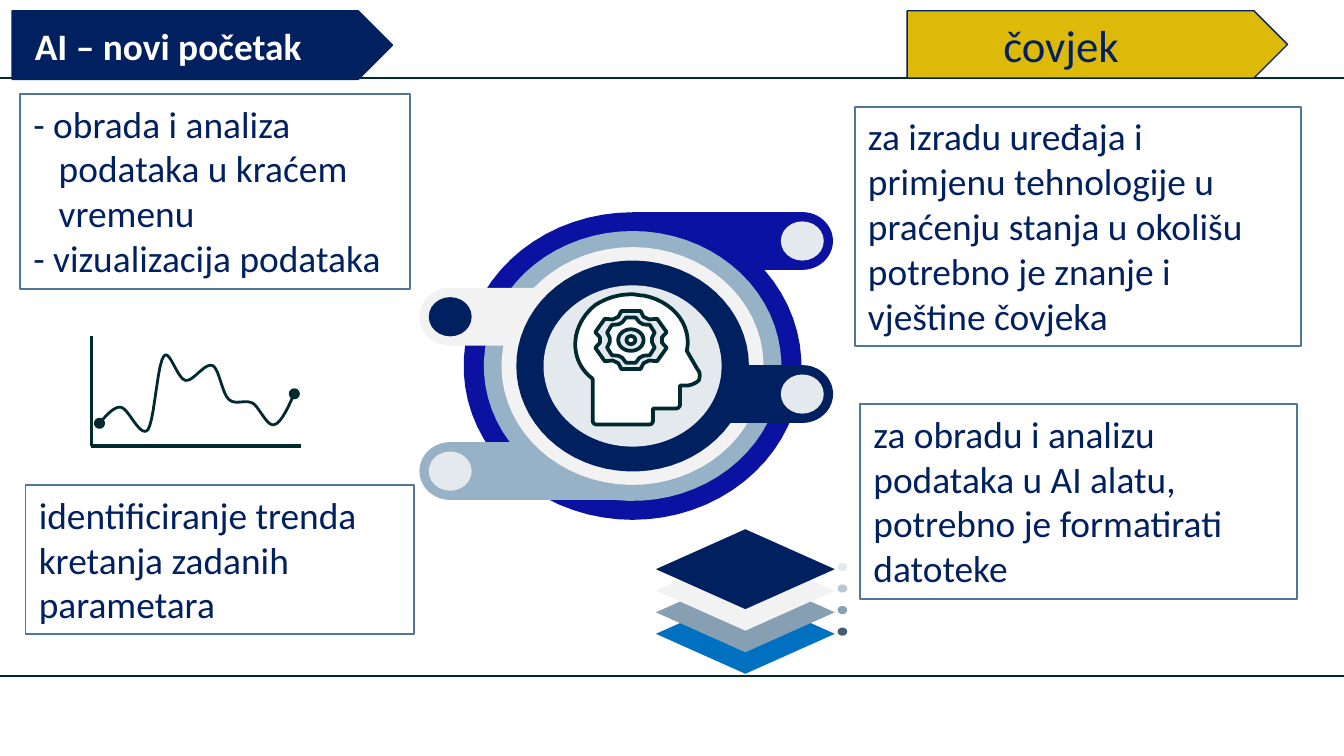
from dataclasses import dataclass
from math import asin, cos, pi, radians, sin

from lxml.etree import SubElement
from pptx import Presentation
from pptx.dml.color import RGBColor
from pptx.enum.shapes import MSO_CONNECTOR, MSO_SHAPE
from pptx.enum.text import MSO_ANCHOR, MSO_AUTO_SIZE, PP_ALIGN
from pptx.oxml.ns import qn
from pptx.util import Pt


@dataclass(frozen=True)
class Theme:
    font: str = "Calibri"
    body: int = 20
    heading: int = 24
    navy: str = "002060"
    white: str = "FFFFFF"
    gold: str = "DDBA09"
    indigo: str = "0B12A1"
    steel: str = "97B1C7"
    pale: str = "F2F2F2"
    mist: str = "E3E9ED"
    ink: str = "002930"
    frame: str = "517798"
    blue: str = "0070C0"
    slate: str = "869FB2"
    dark_slate: str = "435D74"
    silver: str = "BAC8D3"


THEME = Theme()

RULES = [(0, 41.8, 720, 41.8), (0, 362.2, 720, 362.2)]
BANNERS = [
    ("AI – novi početak", (6.5, 5.8, 203.8, 36.7), 12.2, THEME.body, True, THEME.white, THEME.navy),
    ("čovjek", (486, 5.8, 203.8, 36), 51.5, THEME.heading, False, THEME.navy, THEME.gold),
]
NOTES = [
    ((10.8, 50.4, 208.8, 104.4), 13.6,
     ["- obrada i analiza podataka u kraćem vremenu", "- vizualizacija podataka"]),
    ((13.7, 260, 208.1, 79.9), 0, ["identificiranje trenda kretanja zadanih parametara"]),
    ((457.9, 57.2, 239, 128.2), 0,
     ["za izradu uređaja i primjenu tehnologije u praćenju stanja u okolišu "
      "potrebno je znanje i vještine čovjeka"]),
    ((460.8, 216.6, 234, 104.4), 0,
     ["za obradu i analizu podataka u AI alatu, potrebno je formatirati datoteke"]),
]

RING_CENTER = (338.9, 196.1)
TAB_X = {1: 429.8, -1: 241.2}
TAB_RADII = (16.5, 15.5)
RINGS = [
    (90.5, 82.4, 1, 129.1, THEME.indigo, THEME.mist),
    (79.7, 72.3, -1, 252.4, THEME.steel, THEME.mist),
    (70.2, 63.7, -1, 169.7, THEME.pale, THEME.navy),
    (62.3, 56.5, 1, 211.1, THEME.navy, THEME.mist),
]
GEAR_CENTER = (338, 182.2)
GEARS = [(19.4, 15.8, 15, THEME.mist), (13.2, 12.1, 11, THEME.white)]
HUBS = [(6.8, 5.8, THEME.mist), (2.4, 2.2, THEME.white)]
HEAD = [
    (338.4, 157.7), (331.2, 157.7, 324.7, 159.8, 319, 163.4),
    (312.5, 168.5, 308.2, 176.4, 308.2, 184.3), (308.2, 191.5, 311, 198, 317.5, 203),
    (317.5, 225.4), (317.5, 226.1, 318.2, 227.5, 319.7, 227.5),
    (347.8, 227.5), (349.2, 227.5, 349.9, 226.1, 349.9, 225.4),
    (349.9, 218.9), (362.2, 218.9), (362.9, 218.9, 364.3, 218.2, 364.3, 216.7),
    (364.3, 206.6), (367.9, 206.6), (370.1, 206.6, 373, 205.2, 374.4, 203.8),
    (375.1, 201.6, 375.1, 199.4, 373.7, 198), (367.9, 187.9),
    (368.6, 185, 368.6, 182.2, 367.9, 178.6), (365.8, 168.5, 356.4, 160.6, 344.9, 158.4),
    (342.7, 158.4, 340.6, 157.7, 338.4, 157.7),
]
TREND = [
    (53.3, 226.8), (54.7, 225.4, 60.5, 217.4, 64.8, 218.2),
    (69.1, 218.9, 74.9, 234.7, 79.2, 230.4), (82.8, 225.4, 84.2, 195.1, 87.8, 190.8),
    (90.7, 186.5, 95, 203, 99.4, 203.8), (103.7, 204.5, 109.4, 194.4, 113.8, 195.8),
    (117.4, 197.3, 118.8, 210.2, 122.4, 213.8), (126, 217.4, 131, 213.8, 135.4, 216),
    (139, 218.2, 143.3, 229, 146.9, 227.5), (151.2, 226.8, 156.2, 213.8, 157.7, 211),
]
AXES = [((49, 180, 49, 239), 1.5), ((49, 239, 161.3, 239), 2.25)]
LAYERS = [
    (THEME.blue, THEME.dark_slate), (THEME.slate, THEME.slate),
    (THEME.pale, THEME.silver), (THEME.navy, THEME.mist),
]
LAYER_LEFT, LAYER_BOTTOM_TOP, LAYER_STEP = 351.4, 318.2, 11.55


def style(shape, fill=None, line=None, width=1):
    shape.shadow.inherit = False
    if fill:
        shape.fill.solid()
        shape.fill.fore_color.rgb = RGBColor.from_string(fill)
    else:
        shape.fill.background()
    if line:
        shape.line.color.rgb = RGBColor.from_string(line)
        shape.line.width = Pt(width)
    else:
        shape.line.fill.background()
    return shape


def add_oval(shapes, center, radius_x, radius_y, fill, line=None, width=1):
    box = (center[0] - radius_x, center[1] - radius_y, 2 * radius_x, 2 * radius_y)
    return style(shapes.add_shape(MSO_SHAPE.OVAL, *map(Pt, box)), fill, line, width)


def add_outline(shapes, points, fill=None, line=None, width=1, close=True):
    vertices = [(Pt(x), Pt(y)) for x, y in points]
    builder = shapes.build_freeform(*vertices[0], scale=1.0)
    builder.add_line_segments(vertices[1:], close=close)
    return style(builder.convert_to_shape(), fill, line, width)


def add_line(shapes, ends, color, width):
    connector = shapes.add_connector(MSO_CONNECTOR.STRAIGHT, *map(Pt, ends))
    connector.line.color.rgb = RGBColor.from_string(color)
    connector.line.width = Pt(width)
    SubElement(connector._element.spPr, qn("a:effectLst"))


def write(shape, lines, size, color, bold=False, hanging=0):
    frame = shape.text_frame
    frame.word_wrap = True
    frame.text = "\n".join(lines)
    for paragraph in frame.paragraphs:
        if hanging:
            properties = paragraph._p.get_or_add_pPr()
            properties.set("marL", str(Pt(hanging)))
            properties.set("indent", str(-Pt(hanging)))
        paragraph.alignment = PP_ALIGN.LEFT
        paragraph.font.name = THEME.font
        paragraph.font.size = Pt(size)
        paragraph.font.bold = bold
        paragraph.font.color.rgb = RGBColor.from_string(color)
    return frame


def arc(center, radius_x, radius_y, start, end, side=1, steps=60):
    angles = [start + (end - start) * step / steps for step in range(steps + 1)]
    return [(center[0] + side * radius_x * cos(angle), center[1] + radius_y * sin(angle))
            for angle in angles]


def ring_points(radius_x, radius_y, side, tab_y):
    top, bottom = [asin(max(-1, min(1, (tab_y + edge - RING_CENTER[1]) / radius_y)))
                   for edge in (-TAB_RADII[1], TAB_RADII[1])]
    body = arc(RING_CENTER, radius_x, radius_y, bottom, 2 * pi + top, side)
    return body + arc((TAB_X[side], tab_y), *TAB_RADII, -pi / 2, pi / 2, side, 20)


def gear_points(radius_x, radius_y, half_tooth):
    corners = [(-24, 0.86), (-half_tooth, 1.02), (half_tooth, 1.02), (24, 0.86)]
    return [(GEAR_CENTER[0] + radius_x * reach * cos(radians(60 * tooth + 30 + turn)),
             GEAR_CENTER[1] + radius_y * reach * sin(radians(60 * tooth + 30 + turn)))
            for tooth in range(6) for turn, reach in corners]


def curve_points(segments, steps=10):
    points = [segments[0]]
    for segment in segments[1:]:
        if len(segment) == 2:
            points.append(segment)
            continue
        controls = [points[-1], segment[:2], segment[2:4], segment[4:]]
        for step in range(1, steps + 1):
            t = step / steps
            weights = ((1 - t) ** 3, 3 * t * (1 - t) ** 2, 3 * t * t * (1 - t), t ** 3)
            points.append(tuple(sum(weight * control[axis] for weight, control
                                    in zip(weights, controls)) for axis in (0, 1)))
    return points


def main():
    """Build the slide about AI and the human role in data analysis."""
    presentation = Presentation()
    presentation.slide_width, presentation.slide_height = Pt(720), Pt(405)
    slide = presentation.slides.add_slide(presentation.slide_layouts[6])
    shapes = slide.shapes

    for ends in RULES:
        add_line(shapes, ends, THEME.ink, 0.75)
    for text, box, inset, size, bold, color, fill in BANNERS:
        banner = style(shapes.add_shape(MSO_SHAPE.PENTAGON, *map(Pt, box)), fill, THEME.navy, 0.75)
        frame = write(banner, [text], size, color, bold)
        frame.margin_left = Pt(inset)
        frame.vertical_anchor = MSO_ANCHOR.MIDDLE

    rings = shapes.add_group_shape().shapes
    for radius_x, radius_y, side, tab_y, fill, dot in RINGS:
        add_outline(rings, ring_points(radius_x, radius_y, side, tab_y), fill)
        add_oval(rings, (TAB_X[side], tab_y), 11.5, 10.5, dot)
    add_oval(rings, RING_CENTER, 47.7, 43.2, THEME.mist)

    head = shapes.add_group_shape().shapes
    add_outline(head, curve_points(HEAD), THEME.white, THEME.ink, 2)
    for radius_x, radius_y, half_tooth, fill in GEARS:
        add_outline(head, gear_points(radius_x, radius_y, half_tooth), fill, THEME.ink, 2)
    for radius_x, radius_y, fill in HUBS:
        add_oval(head, GEAR_CENTER, radius_x, radius_y, fill, THEME.ink, 2)

    for box, hanging, lines in NOTES:
        note = shapes.add_textbox(*map(Pt, box))
        note.line.color.rgb = RGBColor.from_string(THEME.frame)
        note.line.width = Pt(1)
        frame = write(note, lines, THEME.body, THEME.navy, hanging=hanging)
        frame.auto_size = MSO_AUTO_SIZE.SHAPE_TO_FIT_TEXT

    layers = shapes.add_group_shape().shapes
    for index, (fill, dot) in enumerate(LAYERS):
        top = LAYER_BOTTOM_TOP - index * LAYER_STEP
        box = (LAYER_LEFT, top, 95.8, 42.8)
        style(layers.add_shape(MSO_SHAPE.DIAMOND, *map(Pt, box)), fill)
        add_oval(layers, (451.3, top + 20.2), 2.6, 2.2, dot)

    trend = shapes.add_group_shape().shapes
    curve = add_outline(trend, curve_points(TREND), None, THEME.ink, 1.5, close=False)
    for end in ("a:headEnd", "a:tailEnd"):
        SubElement(curve.line._get_or_add_ln(), qn(end), type="oval")
    for ends, width in AXES:
        add_line(trend, ends, THEME.ink, width)

    presentation.save("out.pptx")


if __name__ == "__main__":
    main()
